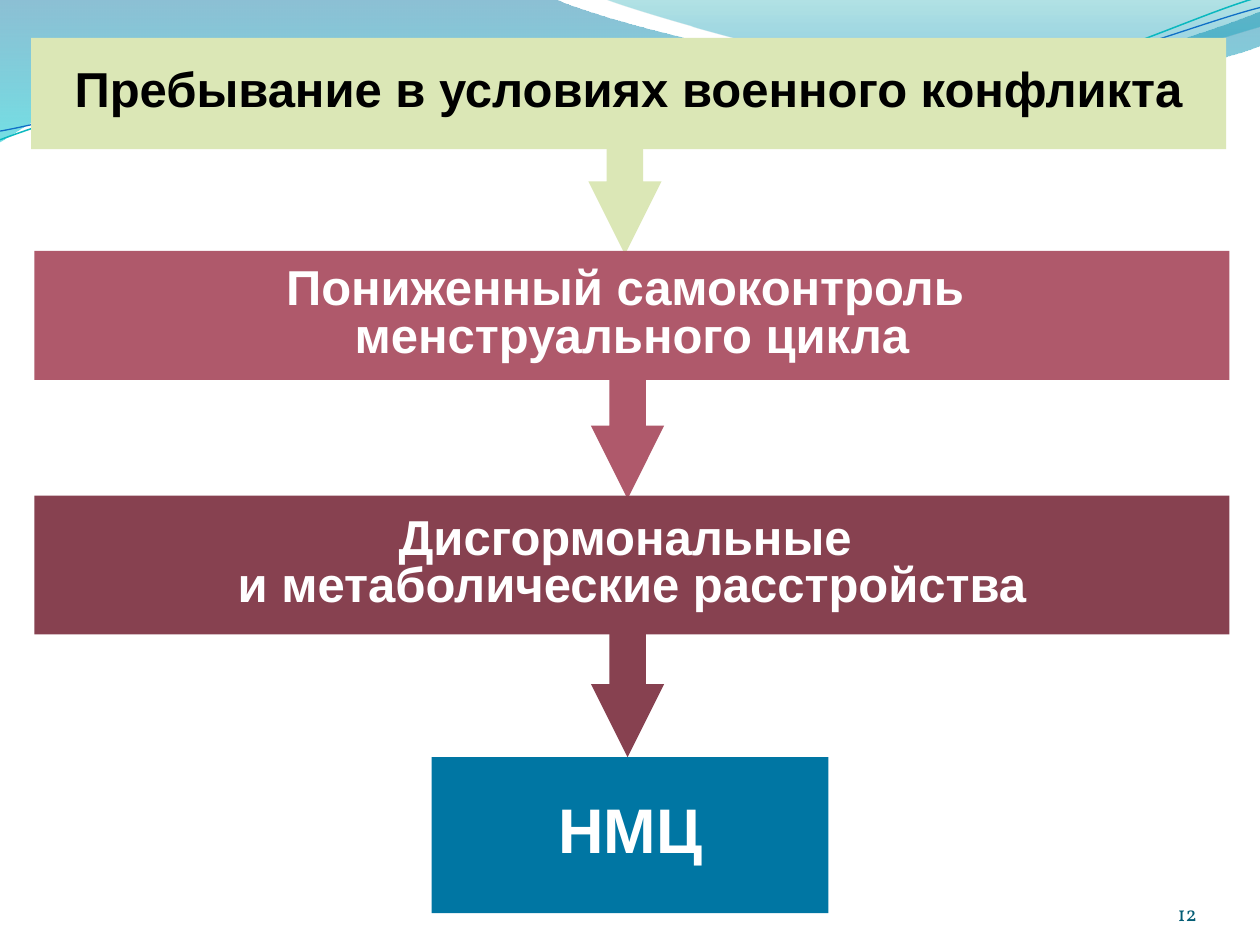
from lxml import etree
from pptx import Presentation
from pptx.dml.color import RGBColor
from pptx.enum.shapes import MSO_SHAPE
from pptx.enum.text import MSO_ANCHOR, MSO_AUTO_SIZE, PP_ALIGN
from pptx.oxml.ns import qn
from pptx.util import Pt

RECTANGLE = MSO_SHAPE.RECTANGLE
RIGHT_ARROW = MSO_SHAPE.RIGHT_ARROW
MIDDLE, BOTTOM = MSO_ANCHOR.MIDDLE, MSO_ANCHOR.BOTTOM
CENTER, RIGHT = PP_ALIGN.CENTER, PP_ALIGN.RIGHT
NO_AUTOFIT = MSO_AUTO_SIZE.NONE

GREEN, ROSE, WINE, BLUE = "DBE7B6", "AF596B", "874150", "0076A3"
WHITE, BLACK = "FFFFFF", "000000"

LEFT_WAVE = [
    (0, 0), (316.8, -0.7),
    (342.7, 12.2, 478.1, 45.4, 545.8, 45.4),
    (614.2, 45.4, 689.8, 18.7, 720, 6.5),
    (720.7, 25.9),
    (707.8, 31.7, 626.4, 54.7, 537.1, 54),
    (447.8, 54, 275, 20.2, 185, 24.5),
    (92.9, 25.9, 33.1, 59.8, -0.7, 81.4),
]
RIGHT_WAVE = [
    (344.9, -0.7),
    (366.5, 7.9, 491, 44.6, 553.7, 46.8),
    (616.3, 49.7, 691.9, 23, 720, 15.1),
    (720, 0),
]
TEAL_LINE = [
    (0, 79.9),
    (34.6, 67, 113.8, 41, 199.4, 37.4),
    (284.4, 33.8, 427, 64.1, 513.4, 57.6),
    (599.8, 51.1, 675.4, 10.8, 718.6, -1.4),
]
BLUE_LINE = [
    (0, 74.9),
    (33.8, 69.1, 118.1, 43.9, 203.8, 40.3),
    (290.2, 36.7, 429.8, 60.5, 516.2, 54),
    (601.9, 48.2, 677.5, 15.1, 720, 4.3),
]


def color(value):
    """Return the colour for a hex string."""
    return RGBColor.from_string(value)


def apply_format(target, values):
    """Set each attribute named in values on target."""
    for name, value in values.items():
        setattr(target, name, value)


def fill_solid(shape, fill):
    """Give a shape a plain fill and no outline."""
    shape.fill.solid()
    shape.fill.fore_color.rgb = color(fill)
    shape.line.fill.background()


def add_outline(slide, segments, close):
    """Add a freeform whose six-number segments are Bezier curves."""
    points = [
        (Pt(segment[i]), Pt(segment[i + 1]))
        for segment in segments for i in range(0, len(segment), 2)
    ]
    builder = slide.shapes.build_freeform(*points[0])
    builder.add_line_segments(points[1:], close=close)
    shape = builder.convert_to_shape()
    shape.shadow.inherit = False
    steps = iter(list(shape.element.iter(qn("a:lnTo"))))
    for segment in segments[1:]:
        step = next(steps)
        if len(segment) == 6:
            step.tag = qn("a:cubicBezTo")
            for extra in (next(steps), next(steps)):
                step.append(extra[0])
                extra.getparent().remove(extra)
    return shape


def add_wave(slide, segments, stops):
    """Add a translucent wave with a vertical gradient."""
    shape = add_outline(slide, segments, True)
    shape.line.fill.background()
    shape.fill.gradient()
    shape.fill.gradient_angle = 270
    for stop, (position, value, _) in zip(shape.fill.gradient_stops, stops):
        stop.position = position
        stop.color.rgb = color(value)
    fills = shape.element.spPr.iter(qn("a:srgbClr"))
    for element, (_, _, opacity) in zip(fills, stops):
        etree.SubElement(element, qn("a:alpha"), val=str(opacity * 1000))


def add_wave_line(slide, segments, value, width):
    """Add a thin unfilled curve."""
    shape = add_outline(slide, segments, False)
    shape.fill.background()
    shape.line.color.rgb = color(value)
    shape.line.width = Pt(width)


def add_arrow(slide, left, top, fill):
    """Add a block arrow that points down."""
    shape = slide.shapes.add_shape(RIGHT_ARROW, Pt(left), Pt(top), Pt(79.2), Pt(41.8))
    shape.rotation = 90
    shape.adjustments[0], shape.adjustments[1] = 0.5, 1
    shape.shadow.inherit = False
    fill_solid(shape, fill)


def write_text(shape, text, font, font_color, frame, paragraph_format):
    """Write one formatted paragraph into a shape."""
    text_frame = shape.text_frame
    apply_format(text_frame, {"word_wrap": True, "auto_size": NO_AUTOFIT, **frame})
    paragraph = text_frame.paragraphs[0]
    paragraph.text = text
    apply_format(paragraph, paragraph_format)
    for run in paragraph.runs:
        apply_format(run.font, font)
        run.font.color.rgb = color(font_color)


def format_box(shape, text, fill, font_color, size):
    """Fill a box and centre its bold label."""
    fill_solid(shape, fill)
    write_text(
        shape, text, {"name": "Arial", "size": Pt(size), "bold": True}, font_color,
        {"vertical_anchor": MIDDLE},
        {"alignment": CENTER, "line_spacing": 0.8, "space_before": Pt(5.8)},
    )


def add_box(slide, text, bounds, fill, size=28):
    """Add a rectangle with a white label."""
    shape = slide.shapes.add_shape(RECTANGLE, *map(Pt, bounds))
    shape.shadow.inherit = False
    format_box(shape, text, fill, WHITE, size)


def place_title(slide, text, bounds):
    """Move the title placeholder to the front as the top box."""
    title = slide.shapes.title
    apply_format(title, dict(zip(("left", "top", "width", "height"), map(Pt, bounds))))
    format_box(title, text, GREEN, BLACK, 28)
    title.element.getparent().append(title.element)


def add_page_number(slide, text):
    """Add the page number at the bottom right."""
    shape = slide.shapes.add_textbox(Pt(624.2), Pt(500.4), Pt(59.8), Pt(28.8))
    margins = {f"margin_{side}": 0 for side in ("left", "top", "right", "bottom")}
    write_text(
        shape, text, {"name": "Vollkorn", "size": Pt(12)}, "045D75",
        {"vertical_anchor": BOTTOM, **margins}, {"alignment": RIGHT},
    )


def main():
    """Build and save the slide."""
    presentation = Presentation()
    presentation.slide_width, presentation.slide_height = Pt(720), Pt(540)
    slide = presentation.slides.add_slide(presentation.slide_layouts[5])

    add_wave(slide, LEFT_WAVE, [(0, "0074A1", 45), (1, "00C6CF", 55)])
    add_wave(slide, RIGHT_WAVE, [(0, "00A1A9", 30), (0.8, "008BBF", 45)])
    add_wave_line(slide, TEAL_LINE, "0AB8BF", 0.85)
    add_wave_line(slide, BLUE_LINE, "0F6FC6", 0.75)

    for left, top, fill in ((319, 372.2, WINE), (319, 224.6, ROSE), (317.5, 85, GREEN)):
        add_arrow(slide, left, top, fill)
    add_page_number(slide, "12")

    place_title(slide, "Пребывание в условиях военного конфликта", (17.8, 21.6, 682.8, 63.7))
    add_box(slide, "Пониженный самоконтроль \vменструального цикла",
            (19.7, 143.4, 682.8, 73.7), ROSE)
    add_box(slide, "Дисгормональные \vи метаболические расстройства",
            (19.7, 283.3, 682.8, 79.3), WINE)
    add_box(slide, "НМЦ", (246.7, 432.6, 226.7, 89.2), BLUE, 36)

    presentation.save("out.pptx")


if __name__ == "__main__":
    main()
